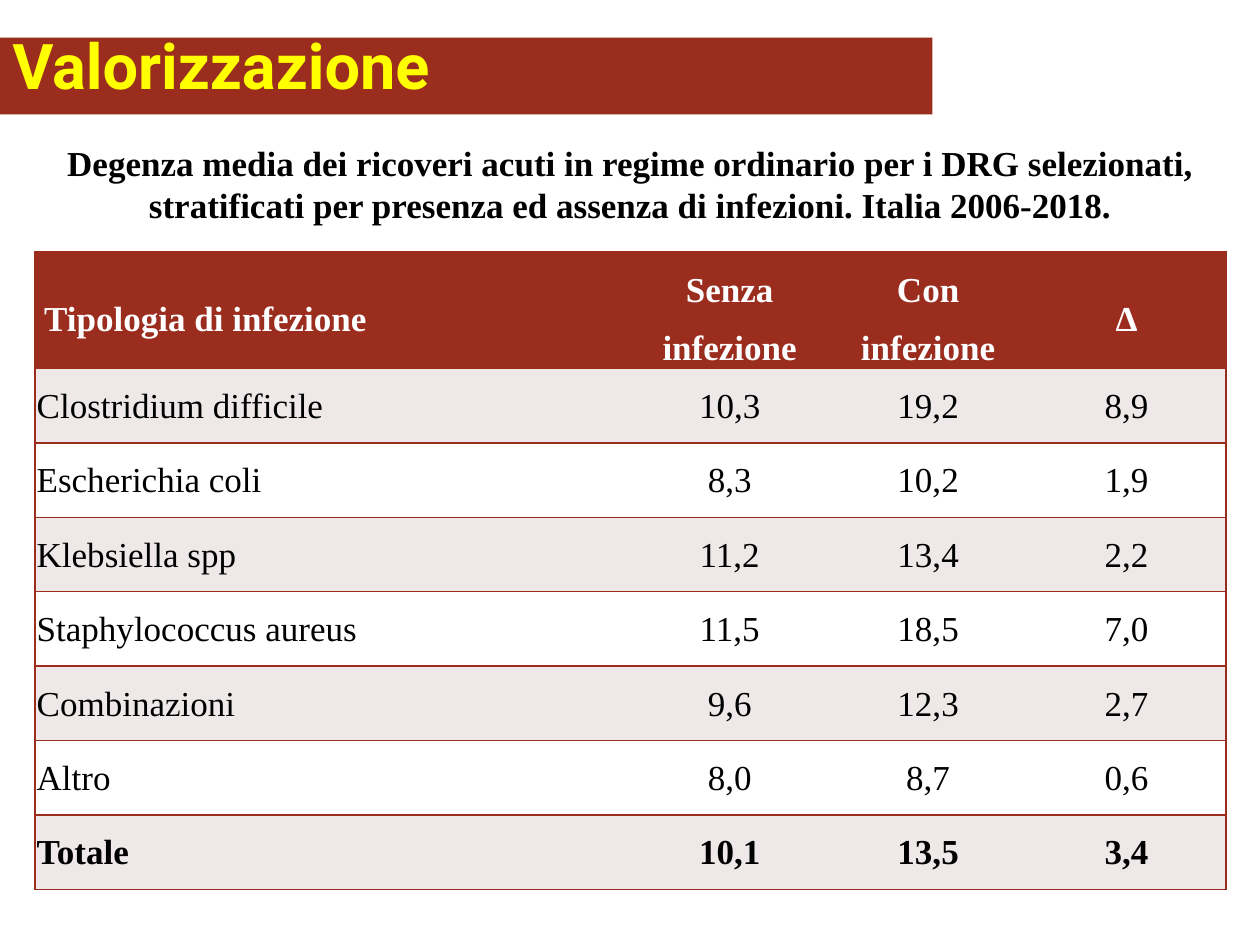
from dataclasses import dataclass

from lxml.etree import SubElement
from pptx import Presentation
from pptx.dml.color import RGBColor
from pptx.enum.shapes import MSO_SHAPE
from pptx.enum.text import MSO_ANCHOR as Anchor, PP_ALIGN as Align
from pptx.oxml.ns import qn
from pptx.util import Cm, Pt

COLORS = {
    "brick": "9B2D1F",
    "yellow": "FFFF00",
    "band": "EFE8E8",
    "white": "FFFFFF",
    "black": "000000",
}
SERIF = "Times New Roman"
COLUMN_WIDTHS = [12, 4, 4, 4]
HEADER_HEIGHT, ROW_HEIGHT = 2.34, 1.5
HEADERS = ["Tipologia di infezione", "Senza infezione", "Con infezione", "∆"]


@dataclass
class InfectionStay:
    infection: str
    without: str
    with_infection: str
    difference: str

    def values(self) -> list[str]:
        return [self.infection, self.without, self.with_infection, self.difference]


STAYS = [
    InfectionStay("Clostridium difficile", "10,3", "19,2", "8,9"),
    InfectionStay("Escherichia coli", "8,3", "10,2", "1,9"),
    InfectionStay("Klebsiella spp", "11,2", "13,4", "2,2"),
    InfectionStay("Staphylococcus aureus", "11,5", "18,5", "7,0"),
    InfectionStay("Combinazioni", "9,6", "12,3", "2,7"),
    InfectionStay("Altro", "8,0", "8,7", "0,6"),
    InfectionStay("Totale", "10,1", "13,5", "3,4"),
]


def color(name: str) -> RGBColor:
    return RGBColor.from_string(COLORS[name])


def write(text_frame, text: str, size: float, font_name: str, color_name: str,
          bold: bool, align: Align):
    """Fill a text frame with one formatted paragraph."""
    text_frame.text = text
    paragraph = text_frame.paragraphs[0]
    paragraph.alignment = align
    for run in paragraph.runs:
        run.font.size = Pt(size)
        run.font.name = font_name
        run.font.bold = bold
        run.font.color.rgb = color(color_name)
    return paragraph


def set_borders(cell, column: int, last_column: int) -> None:
    """Draw horizontal rules everywhere, vertical ones only at the table's edges."""
    visible = {"L": column == 0, "R": column == last_column, "T": True, "B": True}
    properties = cell._tc.get_or_add_tcPr()
    for side, shown in visible.items():
        line = SubElement(properties, qn(f"a:ln{side}"), w=str(Pt(1)))
        if shown:
            fill = SubElement(line, qn("a:solidFill"))
            SubElement(fill, qn("a:srgbClr"), val=COLORS["brick"])
        else:
            SubElement(line, qn("a:noFill"))


def add_title(slide, text: str) -> None:
    shape = slide.shapes.add_shape(MSO_SHAPE.RECTANGLE, 0, Cm(0.76), Cm(18.8), Cm(1.55))
    shape.shadow.inherit = False
    shape.fill.solid()
    shape.fill.fore_color.rgb = color("brick")
    shape.line.fill.background()
    text_frame = shape.text_frame
    text_frame.word_wrap = True
    text_frame.vertical_anchor = Anchor.BOTTOM
    text_frame.margin_bottom = Cm(0.25)
    write(text_frame, text, 36, "Roboto", "yellow", True, Align.LEFT)


def add_caption(slide, text: str) -> None:
    box = slide.shapes.add_textbox(Cm(0.71), Cm(2.72), Cm(24), Cm(1.96))
    box.text_frame.word_wrap = True
    write(box.text_frame, text, 20, SERIF, "black", True, Align.CENTER)


def add_stay_table(slide, stays: list[InfectionStay]) -> None:
    rows = [HEADERS] + [stay.values() for stay in stays]
    heights = [HEADER_HEIGHT] + [ROW_HEIGHT] * len(stays)
    table = slide.shapes.add_table(
        len(rows), len(HEADERS), Cm(0.71), Cm(5.08),
        Cm(sum(COLUMN_WIDTHS)), Cm(sum(heights))).table
    for column, width in zip(table.columns, COLUMN_WIDTHS):
        column.width = Cm(width)

    for row_index, (values, height) in enumerate(zip(rows, heights)):
        table.rows[row_index].height = Cm(height)
        is_header = row_index == 0
        is_total = row_index == len(rows) - 1
        fill_name = "brick" if is_header else "band" if row_index % 2 else "white"
        for column_index, value in enumerate(values):
            cell = table.cell(row_index, column_index)
            set_borders(cell, column_index, len(values) - 1)
            cell.fill.solid()
            cell.fill.fore_color.rgb = color(fill_name)
            cell.vertical_anchor = Anchor.MIDDLE
            cell.margin_left = cell.margin_right = Cm(0.18 if is_header else 0.03)
            cell.margin_top = Cm(0 if is_header else 0.03)
            cell.margin_bottom = 0
            paragraph = write(
                cell.text_frame, value, 20, SERIF, "white" if is_header else "black",
                is_header or is_total, Align.CENTER if column_index else Align.LEFT)
            if is_header:
                paragraph.line_spacing = 1.5


def main() -> None:
    presentation = Presentation()
    presentation.slide_width, presentation.slide_height = Cm(25.4), Cm(19.05)
    slide = presentation.slides.add_slide(presentation.slide_layouts[6])

    # Title band
    add_title(slide, "Valorizzazione")
    # Average stay by infection type
    add_stay_table(slide, STAYS)
    # Table caption
    add_caption(slide, "Degenza media dei ricoveri acuti in regime ordinario per i DRG "
                       "selezionati, stratificati per presenza ed assenza di infezioni. "
                       "Italia 2006-2018.")
    presentation.save("out.pptx")


if __name__ == "__main__":
    main()
